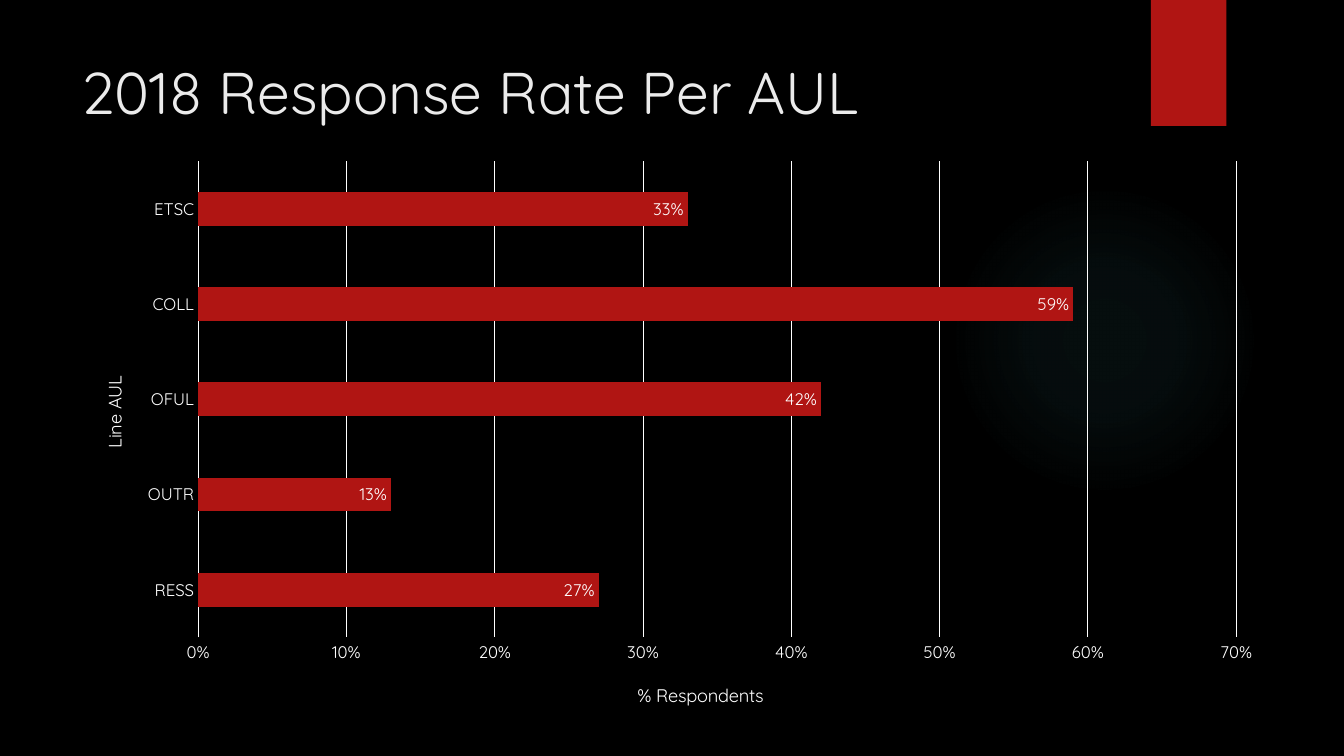
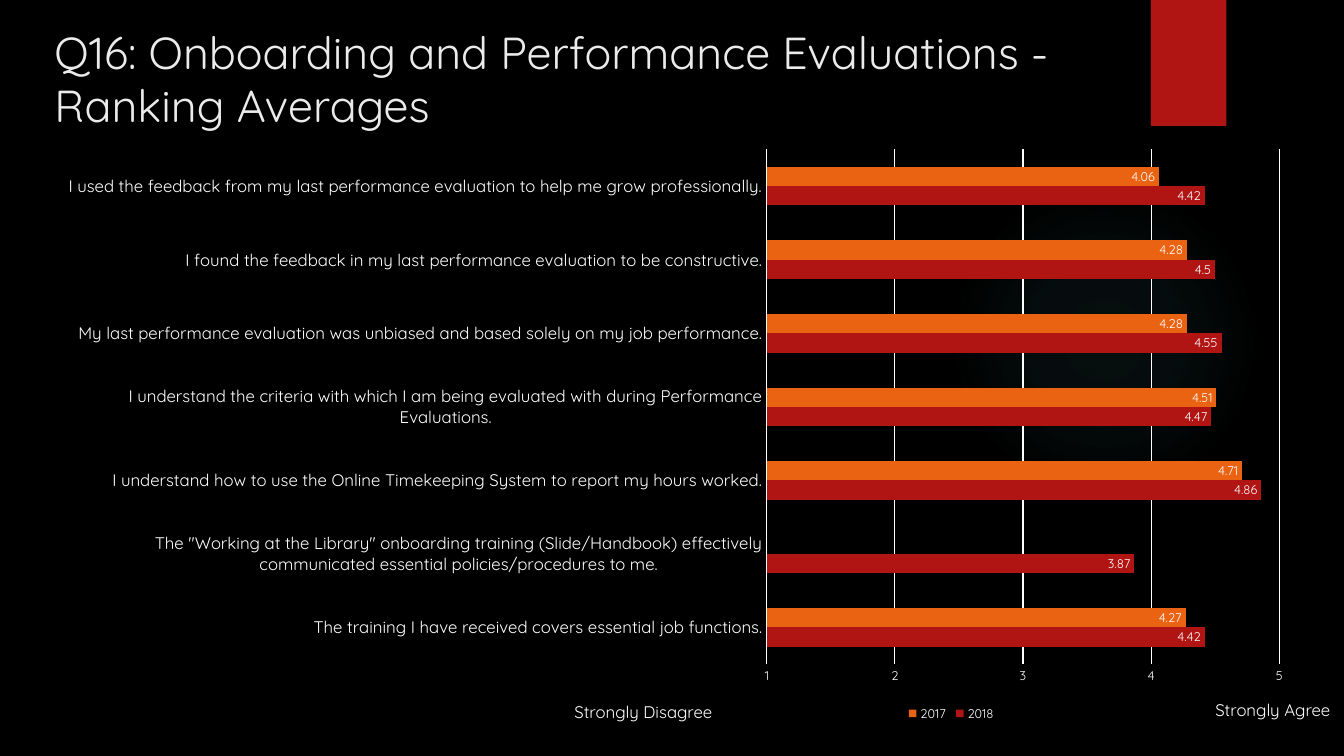
"""Builds two survey slides with bar charts on a black background."""
from lxml.etree import SubElement
from pptx import Presentation
from pptx.chart.data import CategoryChartData
from pptx.dml.color import RGBColor
from pptx.enum.chart import (XL_CHART_TYPE, XL_LABEL_POSITION,
                             XL_LEGEND_POSITION, XL_TICK_MARK)
from pptx.enum.shapes import MSO_SHAPE
from pptx.oxml import parse_xml
from pptx.oxml.ns import nsdecls, qn
from pptx.util import Inches, Pt

BLACK = RGBColor(0x00, 0x00, 0x00)
WHITE = RGBColor(0xFF, 0xFF, 0xFF)
PALE = RGBColor(0xEB, 0xEB, 0xEB)
RED = RGBColor(0xB0, 0x15, 0x13)
ORANGE = RGBColor(0xEA, 0x63, 0x12)
TEAL = RGBColor(0x50, 0xB9, 0xC1)
FONT = "Quicksand"
COLUMNS, ROWS = 160, 90
CELL = Inches(7.5) / ROWS
GLOW_STOPS = [(0, 7), (36, 6), (69, 0)]

AUL_RATES = {"RESS": 0.27, "OUTR": 0.13, "OFUL": 0.42, "COLL": 0.59, "ETSC": 0.33}
EVALUATION_RANKS = {
    "The training I have received covers essential job functions.": (4.42, 4.27),
    'The "Working at the Library" onboarding training (Slide/Handbook) effectively '
    "communicated essential policies/procedures to me.": (3.87, None),
    "I understand how to use the Online Timekeeping System to report my hours worked.":
        (4.86, 4.71),
    "I understand the criteria with which I am being evaluated with during "
    "Performance Evaluations.": (4.47, 4.51),
    "My last performance evaluation was unbiased and based solely on my job "
    "performance.": (4.55, 4.28),
    "I found the feedback in my last performance evaluation to be constructive.":
        (4.5, 4.28),
    "I used the feedback from my last performance evaluation to help me grow "
    "professionally.": (4.42, 4.06),
}


def cells(*counts):
    """Turn counts of grid cells into lengths."""
    return [round(count * CELL) for count in counts]


def style_font(font, size, color=WHITE):
    """Set the shared typeface with a size and colour."""
    font.name = FONT
    font.size = Pt(size)
    font.bold = False
    font.color.rgb = color


def add_text(page, area, words, size, color=WHITE):
    """Add a wrapped text box with one run."""
    box = page.shapes.add_textbox(*cells(*area))
    box.text_frame.word_wrap = True
    span = box.text_frame.paragraphs[0].add_run()
    span.text = words
    style_font(span.font, size, color)


def add_plain_shape(page, kind, area, color):
    """Add a filled shape without outline or shadow."""
    shape = page.shapes.add_shape(kind, *cells(*area))
    shape.shadow.inherit = False
    shape.fill.solid()
    shape.fill.fore_color.rgb = color
    shape.line.fill.background()
    return shape


def add_glow(page):
    """Add the faint round glow that fades outwards."""
    glow = add_plain_shape(page, MSO_SHAPE.OVAL, (113, 22, 37, 37), TEAL)
    stops = "".join(
        f'<a:gs pos="{place * 1000}"><a:srgbClr val="{TEAL}">'
        f'<a:alpha val="{opacity * 1000}"/></a:srgbClr></a:gs>'
        for place, opacity in GLOW_STOPS)
    gradient = parse_xml(
        f'<a:gradFill {nsdecls("a")}><a:gsLst>{stops}</a:gsLst><a:path path="circle">'
        '<a:fillToRect l="50000" t="50000" r="50000" b="50000"/></a:path></a:gradFill>')
    properties = glow.element.spPr
    properties.replace(properties.find(qn("a:solidFill")), gradient)


def add_page(deck):
    """Add a blank page with the shared glow and ribbon."""
    page = deck.slides.add_slide(deck.slide_layouts[6])
    add_glow(page)
    add_plain_shape(page, MSO_SHAPE.RECTANGLE, (137, 0, 9, 15), RED)
    return page


def place_part(element, index, frame, area):
    """Place a chart part at an area of the slide grid."""
    for former in element.findall(qn("c:layout")):
        element.remove(former)
    layout = parse_xml(f'<c:layout {nsdecls("c")}/>')
    element.insert(index, layout)
    manual = SubElement(layout, qn("c:manualLayout"))
    settings = {"layoutTarget": "inner"} if index == 0 else {}
    settings.update(xMode="edge", yMode="edge")
    left, top, width, height = frame
    shares = ((area[0] - left) / width, (area[1] - top) / height,
              *(length / whole for length, whole in zip(area[2:], (width, height))))
    settings.update(zip("xywh", (f"{share:.4f}" for share in shares)))
    for name, value in settings.items():
        SubElement(manual, qn(f"c:{name}")).set("val", value)


def add_bar_chart(page, frame, plot_area, categories, series, scale,
                  small_size, number_format="General"):
    """Add a horizontal bar chart with white grid lines and end labels."""
    chart_data = CategoryChartData()
    chart_data.categories = categories
    for name, values, _ in series:
        chart_data.add_series(name, values)
    chart = page.shapes.add_chart(
        XL_CHART_TYPE.BAR_CLUSTERED, *cells(*frame), chart_data).chart
    chart.has_title = chart.has_legend = False
    style_font(chart.font, 10)
    plot = chart.plots[0]
    plot.gap_width = 182
    plot.overlap = 0
    plot.vary_by_categories = False
    for bars, (_, _, color) in zip(plot.series, series):
        bars.format.fill.solid()
        bars.format.fill.fore_color.rgb = color
        bars.invert_if_negative = False
        labels = bars.data_labels
        labels.show_value = True
        labels.position = XL_LABEL_POSITION.INSIDE_END
        labels.number_format = number_format
        labels.number_format_is_linked = False
        style_font(labels.font, small_size)
    category_axis, value_axis = chart.category_axis, chart.value_axis
    for axis, size in ((category_axis, 12), (value_axis, small_size)):
        axis.major_tick_mark = axis.minor_tick_mark = XL_TICK_MARK.NONE
        style_font(axis.tick_labels.font, size)
    value_axis.minimum_scale, value_axis.maximum_scale, value_axis.major_unit = scale
    value_axis.tick_labels.number_format = number_format
    value_axis.tick_labels.number_format_is_linked = False
    value_axis.format.line.fill.background()
    for line in (category_axis.format.line, value_axis.major_gridlines.format.line):
        line.color.rgb = WHITE
        line.width = Pt(0.75)
    place_part(chart.element.find(f".//{qn('c:plotArea')}"), 0, frame, plot_area)
    return chart


def add_axis_title(axis, words, frame, corner, rotation=0):
    """Give an axis a title at a corner of the slide grid."""
    title = axis.axis_title
    span = title.text_frame.paragraphs[0].add_run()
    span.text = words
    style_font(span.font, 13)
    element = title.element if hasattr(title, "element") else title._element
    body = element.find(f".//{qn('a:bodyPr')}")
    body.set("rot", str(rotation * 60000))
    body.set("vert", "horz")
    place_part(element, 1, frame, corner)


def add_legend(chart, frame, area):
    """Add a legend at an area of the slide grid."""
    chart.has_legend = True
    legend = chart.legend
    legend.position = XL_LEGEND_POSITION.BOTTOM
    legend.include_in_layout = False
    style_font(legend.font, 9)
    place_part(chart.element.find(f".//{qn('c:legend')}"), 1, frame, area)


def add_response_page(deck):
    """Build the page of response rates."""
    page = add_page(deck)
    add_text(page, (8.5, 6, 123.5, 18.4), "2018 Response Rate Per AUL", 42, PALE)
    frame = (8.5, 17.8, 143.5, 68.5)
    chart = add_bar_chart(
        page, frame, (23.6, 19.2, 123.6, 56.7), list(AUL_RATES),
        [("Series 1", list(AUL_RATES.values()), RED)], (0, 0.7, 0.1), 12, "0%")
    add_axis_title(chart.category_axis, "Line AUL", frame, (11.7, 44.4), -90)
    add_axis_title(chart.value_axis, "% Respondents", frame, (75.5, 80.8))


def add_evaluation_page(deck):
    """Build the page of ranking averages."""
    page = add_page(deck)
    frame = (5.3, 16.3, 150.5, 70.3)
    ranks_2018, ranks_2017 = zip(*EVALUATION_RANKS.values())
    chart = add_bar_chart(
        page, frame, (91.3, 17.8, 61, 61.3), list(EVALUATION_RANKS),
        [("2018", ranks_2018, RED), ("2017", ranks_2017, ORANGE)], (1, 5, 1), 9)
    add_legend(chart, frame, (107.5, 83.9, 11.5, 2.6))
    add_text(page, (5.3, 2.3, 132.5, 10.3),
             "Q16: Onboarding and Performance Evaluations - Ranking Averages", 32, PALE)
    add_text(page, (67.2, 82.9, 19.6, 3.6), "Strongly Disagree", 12)
    add_text(page, (143.5, 82.7, 16.5, 3.6), "Strongly Agree", 12)


def main():
    """Build and save the deck."""
    deck = Presentation()
    deck.slide_width, deck.slide_height = cells(COLUMNS, ROWS)
    background = deck.slide_master.background.fill
    background.solid()
    background.fore_color.rgb = BLACK
    add_response_page(deck)
    add_evaluation_page(deck)
    deck.save("out.pptx")


if __name__ == "__main__":
    main()
